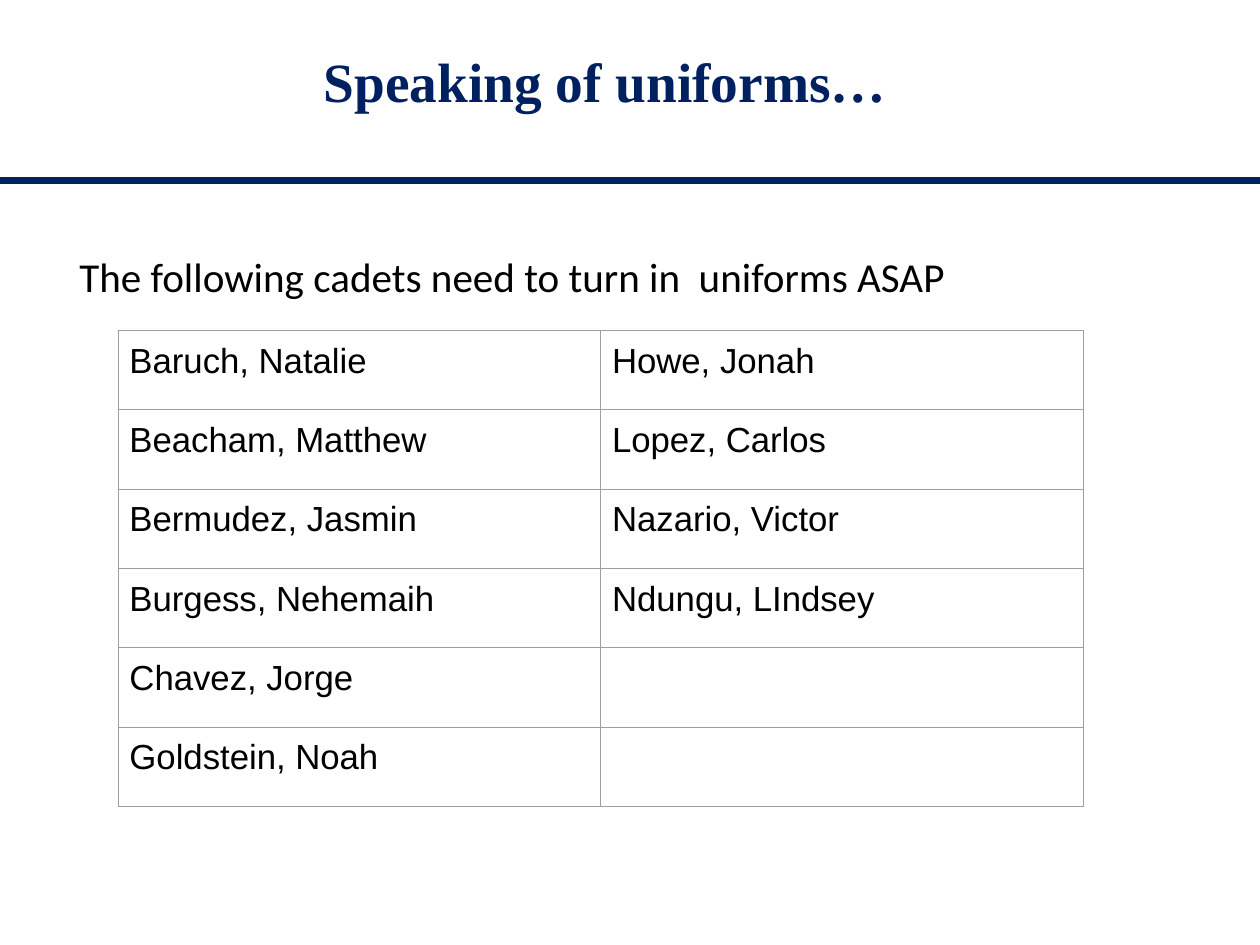
from lxml import etree
from pptx import Presentation
from pptx.dml.color import RGBColor
from pptx.enum.shapes import MSO_CONNECTOR
from pptx.enum.text import MSO_ANCHOR, PP_ALIGN
from pptx.oxml.ns import qn
from pptx.util import Cm, Pt

STRAIGHT = MSO_CONNECTOR.STRAIGHT
TOP, MIDDLE = MSO_ANCHOR.TOP, MSO_ANCHOR.MIDDLE
LEFT, CENTER = PP_ALIGN.LEFT, PP_ALIGN.CENTER

# Content
TITLE = "Speaking of uniforms…"
REQUEST = "The following cadets need to turn in  uniforms ASAP"
CADETS = [
    ("Baruch, Natalie", "Howe, Jonah"),
    ("Beacham, Matthew", "Lopez, Carlos"),
    ("Bermudez, Jasmin", "Nazario, Victor"),
    ("Burgess, Nehemaih", "Ndungu, LIndsey"),
    ("Chavez, Jorge", ""),
    ("Goldstein, Noah", ""),
]

# Look
NAVY, BLACK, GREY = "002060", "000000", "9E9E9E"
SLIDE_W, SLIDE_H = Cm(28.12), Cm(21.08)
RULE_Y = Cm(4.02)
COLUMN_W, ROW_H = Cm(10.77), Cm(1.77)
INSET = Cm(0.25)


def color(value):
    return RGBColor.from_string(value)


def style(paragraph, font_name, size, ink, bold=False):
    font = paragraph.font
    font.name, font.size, font.bold = font_name, Pt(size), bold
    font.color.rgb = color(ink)


def add_text(slide, box, text, look, inset_y, anchor=TOP, align=LEFT):
    frame = slide.shapes.add_textbox(*map(Cm, box)).text_frame
    frame.word_wrap = True
    frame.vertical_anchor = anchor
    frame.margin_left = frame.margin_right = INSET
    frame.margin_top = frame.margin_bottom = inset_y
    paragraph = frame.paragraphs[0]
    paragraph.text, paragraph.alignment = text, align
    style(paragraph, *look)
    return paragraph


def add_borders(cell, ink, width):
    properties = cell._tc.get_or_add_tcPr()
    for side in ("a:lnL", "a:lnR", "a:lnT", "a:lnB"):
        line = etree.SubElement(properties, qn(side), w=str(Pt(width)))
        fill = etree.SubElement(line, qn("a:solidFill"))
        etree.SubElement(fill, qn("a:srgbClr"), val=ink)


def main():
    deck = Presentation()
    deck.slide_width, deck.slide_height = SLIDE_W, SLIDE_H
    slide = deck.slides.add_slide(deck.slide_layouts[6])

    # Rule under the heading
    rule = slide.shapes.add_connector(STRAIGHT, 0, RULE_Y, SLIDE_W, RULE_Y)
    rule.line.color.rgb = color(NAVY)
    rule.line.width = Pt(4.5)
    etree.SubElement(rule._element.spPr, qn("a:effectLst"))

    # Heading and request
    heading = add_text(slide, (0.41, 0.46, 26.19, 2.87), TITLE,
                       ("Times New Roman", 35, NAVY, True),
                       Cm(0.13), MIDDLE, CENTER)
    heading.line_spacing = 0.9
    add_text(slide, (1.52, 5.36, 25.37, 1.63), REQUEST,
             ("Calibri", 26, BLACK), INSET)

    # Cadet table
    row_count, column_count = len(CADETS), len(CADETS[0])
    roster = slide.shapes.add_table(
        row_count, column_count, Cm(2.64), Cm(7.37),
        COLUMN_W * column_count, ROW_H * row_count).table
    roster.first_row = roster.horz_banding = False
    for column in roster.columns:
        column.width = COLUMN_W
    for r, names in enumerate(CADETS):
        roster.rows[r].height = ROW_H
        for c, name in enumerate(names):
            cell = roster.cell(r, c)
            cell.margin_left = cell.margin_right = INSET
            cell.margin_top = cell.margin_bottom = INSET
            add_borders(cell, GREY, 0.75)
            cell.fill.background()
            cell.text = name
            style(cell.text_frame.paragraphs[0], "Arial", 22, BLACK)

    deck.save("out.pptx")


if __name__ == "__main__":
    main()
